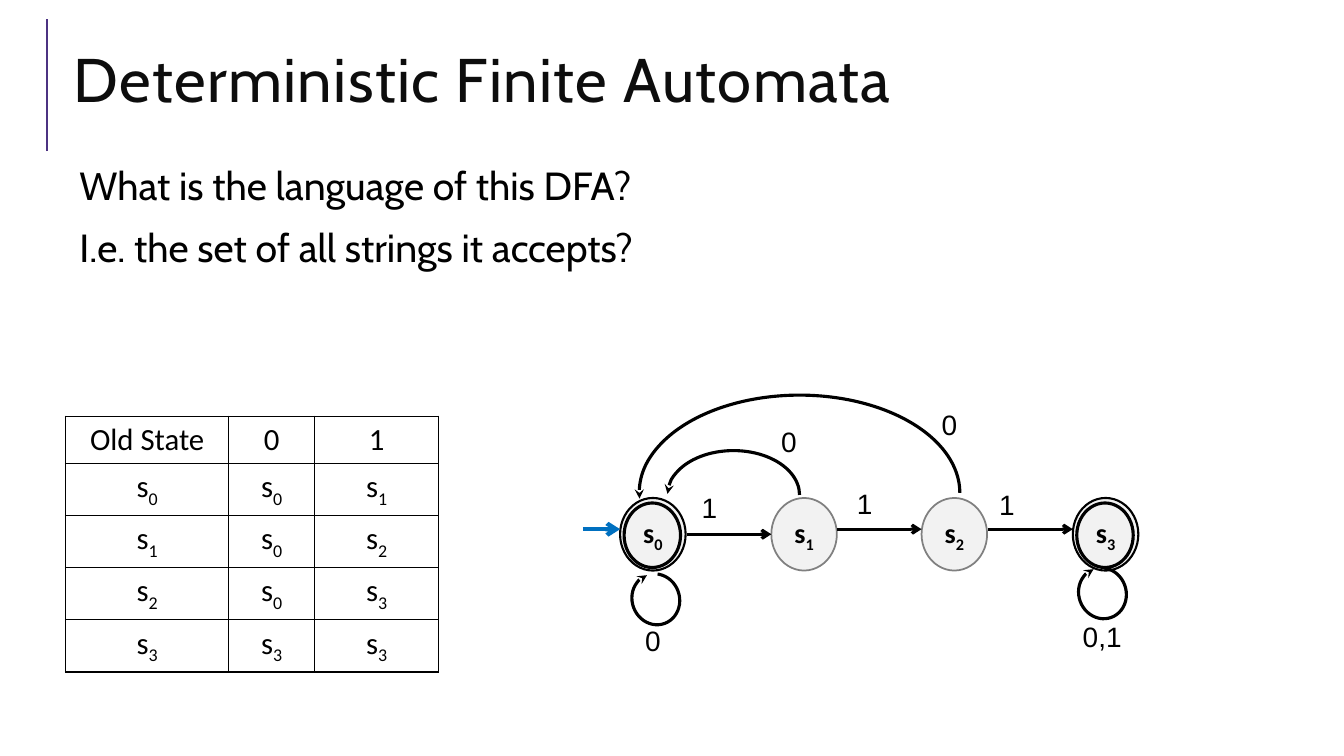
from lxml import etree
from pptx import Presentation
from pptx import util as u
from pptx.dml.color import RGBColor
from pptx.enum import shapes, text
from pptx.oxml import ns

PX = 9144  # 100 px to the inch
COLORS = {
    "ink": "000000",
    "title": "0D0D0D",
    "rule": "4C3282",
    "bullet": "1CADE4",
    "state": "F2F2F2",
    "edge": "808080",
    "start": "0070C0",
}


def rgb(name):
    return RGBColor.from_string(COLORS[name])


def sub(parent, tag, **attrs):
    return etree.SubElement(parent, ns.qn(tag), **attrs)


def write(p, content, font="Calibri", size=20, color="ink", bold=False,
          align=None, spacing=None):
    """Fill a paragraph; whatever follows an underscore is a subscript."""
    p.alignment = align
    for i, part in enumerate(content.split("_")):
        r = p.add_run()
        r.text = part
        r.font.name, r.font.size, r.font.bold = font, u.Pt(size), bold
        r.font.color.rgb = rgb(color)
        rpr = r.font._element
        if spacing:
            rpr.set("spc", str(spacing))
        if i:
            rpr.set("baseline", "-25000")


class Slide:
    def __init__(self, prs, font):
        self.s = prs.slides.add_slide(prs.slide_layouts[1])
        self.font = font

    def place(self, sp, *box):
        sp.left, sp.top, sp.width, sp.height = (v * PX for v in box)

    def stroke(self, sp, color, width, head=None, tail=None):
        sp.line.color.rgb = rgb(color)
        sp.line.width = u.Pt(width)
        ln = sp.line._get_or_add_ln()
        if head:
            sub(ln, "a:headEnd", type=head)
        if tail:
            sub(ln, "a:tailEnd", type=tail)

    def title(self, content, *box):
        sp = self.s.shapes.title
        self.place(sp, *box)
        tf = sp.text_frame
        tf.auto_size = text.MSO_AUTO_SIZE.NONE
        tf.vertical_anchor = text.MSO_ANCHOR.MIDDLE
        p = tf.paragraphs[0]
        p.line_spacing = 0.8
        write(p, content, self.font, 44, "title",
              align=text.PP_ALIGN.LEFT, spacing=100)

    def body(self, lines, *box):
        sp = self.s.placeholders[1]
        self.place(sp, *box)
        tf = sp.text_frame
        tf.auto_size = text.MSO_AUTO_SIZE.NONE
        tf.margin_left = tf.margin_right = 5 * PX
        tf.margin_top = tf.margin_bottom = 5 * PX
        for i, content in enumerate(lines):
            p = tf.add_paragraph() if i else tf.paragraphs[0]
            write(p, content, self.font, 28)
            p.line_spacing = 0.9
            p.space_before, p.space_after = u.Pt(12), u.Pt(2)
            ppr = p._p.get_or_add_pPr()
            ppr.set("marL", str(10 * PX))
            ppr.set("indent", str(-10 * PX))
            sub(sub(ppr, "a:buClr"), "a:srgbClr", val=COLORS["bullet"])
            sub(ppr, "a:buChar", char=" ")

    def label(self, content, x, y, w=28):
        sp = self.s.shapes.add_textbox(x * PX, y * PX, w * PX, 54 * PX)
        sp.text_frame.word_wrap = True
        write(sp.text_frame.paragraphs[0], content, "Arial")

    def shape(self, kind, box, color, width, fill=None, **ends):
        sp = self.s.shapes.add_shape(kind, *(v * PX for v in box))
        sp.shadow.inherit = False
        if fill:
            sp.fill.solid()
            sp.fill.fore_color.rgb = rgb(fill)
        else:
            sp.fill.background()
        self.stroke(sp, color, width, **ends)
        return sp

    def state(self, content, box, color, width):
        sp = self.shape(shapes.MSO_SHAPE.OVAL, box, color, width, "state")
        tf = sp.text_frame
        tf.word_wrap = False
        tf.vertical_anchor = text.MSO_ANCHOR.MIDDLE
        write(tf.paragraphs[0], content, bold=True,
              align=text.PP_ALIGN.CENTER)

    def arc(self, box, start, rotation=0, **ends):
        sp = self.shape(shapes.MSO_SHAPE.ARC, box, "ink", 2.25, **ends)
        sp.adjustments[0], sp.adjustments[1] = start, 0
        sp.rotation = rotation

    def line(self, x1, y1, x2, y2, color="ink", width=2.25, tail=None):
        sp = self.s.shapes.add_connector(
            shapes.MSO_CONNECTOR.STRAIGHT, *(v * PX for v in (x1, y1, x2, y2)))
        self.stroke(sp, color, width, tail=tail)
        sub(sp._element.spPr, "a:effectLst")

    def table(self, rows, box, widths, heights):
        frame = self.s.shapes.add_table(
            len(rows), len(widths), *(v * PX for v in box))
        tbl = frame.table
        tbl.first_row = tbl.horz_banding = False
        for col, w in zip(tbl.columns, widths):
            col.width = w * PX
        for row, h, contents in zip(tbl.rows, heights, rows):
            row.height = h * PX
            for cell, content in zip(row.cells, contents):
                write(cell.text_frame.paragraphs[0], content, size=22,
                      align=text.PP_ALIGN.CENTER)
                tcpr = cell._tc.get_or_add_tcPr()
                for side in "LRTB":
                    ln = sub(tcpr, f"a:ln{side}", w=str(u.Pt(1)))
                    sub(sub(ln, "a:solidFill"), "a:srgbClr",
                        val=COLORS["ink"])
                cell.fill.background()


def main():
    prs = Presentation()
    prs.slide_width, prs.slide_height = 1333 * PX, 750 * PX
    s = Slide(prs, "Cabin")

    # Heading and questions
    s.line(47, 150, 47, 19, "rule", 1.5)
    s.title("Deterministic Finite Automata", 63, 29, 1223, 111)
    s.body(["What is the language of this DFA?",
            "I.e. the set of all strings it accepts?"], 63, 160, 1223, 530)

    # States; the accepting ones carry an inner ring
    for i in range(4):
        x = 615 + 150 * i - i // 2
        accepting = i in (0, 3)
        edge = ("ink", 1.5) if accepting else ("edge", 1.25)
        s.state(f"s_{i}", (x, 494, 65, 72), *edge)
        if accepting:
            s.shape(shapes.MSO_SHAPE.OVAL, (x + 4, 499, 56, 64), "ink", 2.25)

    # Forward transitions and the start arrow
    for x1, x2, y in ((681, 765, 530), (830, 914, 525), (980, 1064, 525)):
        s.line(x1, y, x2, y, tail="arrow")
    s.line(578, 525, 615, 525, "start", 3, "arrow")

    # Transitions back to the first state, and loops
    s.arc((662, 447, 131, 88), 108.56, head="stealth")
    s.arc((634, 392, 318, 194), 106.77, head="stealth")
    for x, y in ((625, 571), (1068, 565)):
        s.arc((x, y, 51, 47), 14.54, 249.8, tail="stealth")

    # Input symbols
    for symbol, x, y in (("1", 686, 482), ("1", 840, 478), ("1", 981, 479),
                         ("0", 765, 416), ("0", 924, 399), ("0", 630, 614)):
        s.label(symbol, x, y)
    s.label("0,1", 1064, 610, 98)

    # Transition table
    moves = [(0, 0, 1), (1, 0, 2), (2, 0, 3), (3, 3, 3)]
    rows = [("Old State", "0", "1")]
    rows += [[f"s_{n}" for n in move] for move in moves]
    s.table(rows, (65, 413, 369, 233), (162, 85, 123), (34, 34, 20, 34, 34))

    prs.save("out.pptx")


if __name__ == "__main__":
    main()
